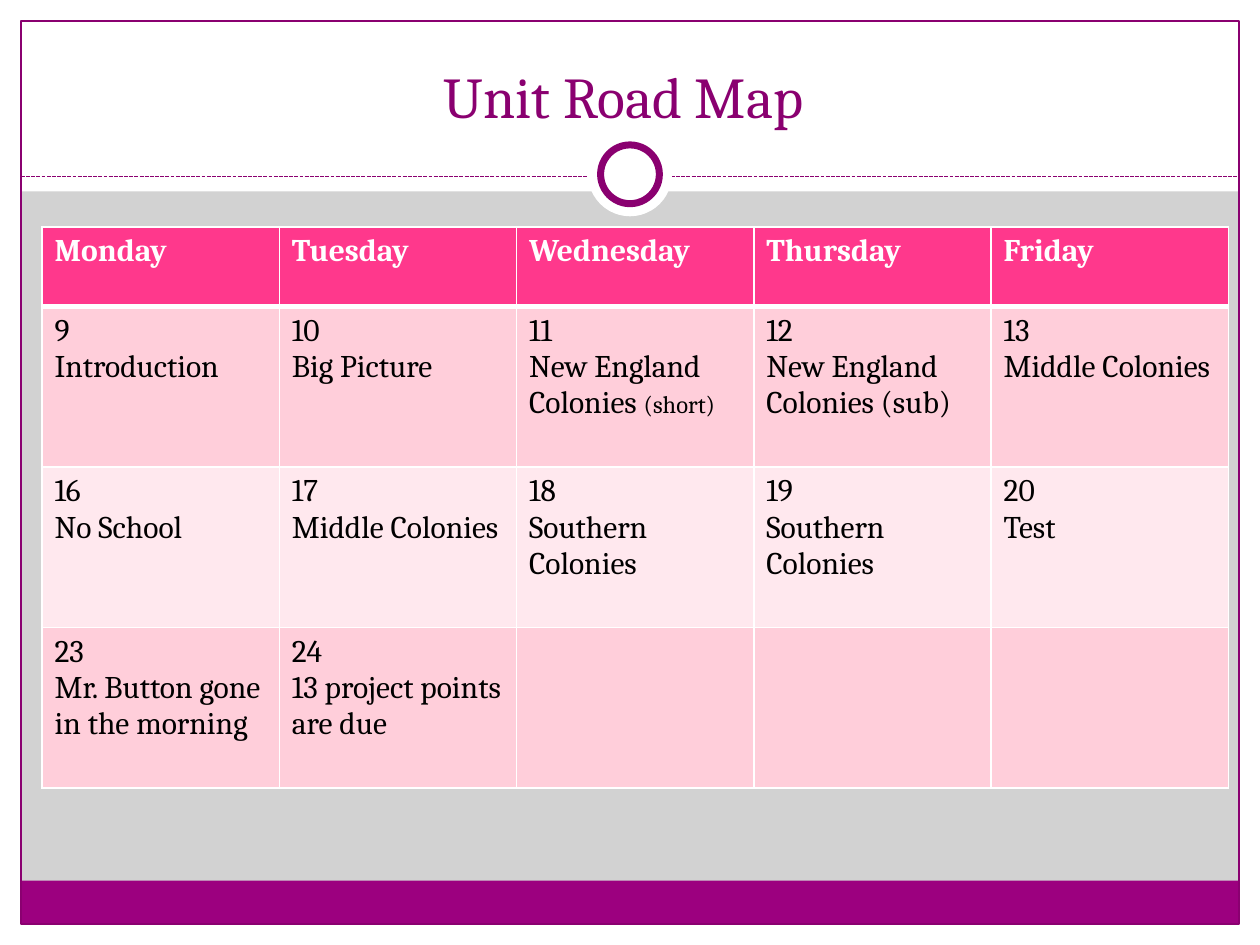
from lxml.etree import SubElement
from pptx import Presentation
from pptx.dml.color import RGBColor
from pptx.enum.dml import MSO_LINE
from pptx.enum.shapes import MSO_CONNECTOR, MSO_SHAPE
from pptx.enum.text import MSO_ANCHOR, MSO_AUTO_SIZE, PP_ALIGN
from pptx.oxml.ns import qn
from pptx.util import Inches, Pt

COLORS = {
    "back": "D2D2D2", "white": "FFFFFF", "black": "000000",
    "bar": "9C007F", "plum": "8A0070", "head": "FF388C",
    "odd": "FFCEDA", "even": "FFE8EE",
}
COLS, ROWS = 60, 45
DAYS = ["Monday", "Tuesday", "Wednesday", "Thursday", "Friday"]
WEEKS = [
    ["9\vIntroduction", "10\vBig Picture",
     ("11\vNew England Colonies ", "(short)"),
     "12\vNew England Colonies (sub)", "13\nMiddle Colonies"],
    ["16\vNo School", "17\vMiddle Colonies", "18\vSouthern Colonies",
     "19\vSouthern Colonies", "20\vTest"],
    ["23\vMr. Button gone in the morning",
     "24\v13 project points are due", "", "", ""],
]


def rgb(name):
    return RGBColor.from_string(COLORS[name])


def write(tf, text, size=18, color="black", bold=False, align=None, small=""):
    tf.text = text
    if small:
        tf.paragraphs[-1].add_run().text = small
    for p in tf.paragraphs:
        p.alignment = align
        for r in p.runs:
            r.font.name = "Cambria"
            r.font.size = Pt(size)
            r.font.bold = bold
            r.font.color.rgb = rgb(color)
    if small:
        tf.paragraphs[-1].runs[-1].font.size = Pt(14)


class Deck:
    def __init__(self):
        self.prs = Presentation()
        self.prs.slide_width, self.prs.slide_height = Inches(10), Inches(7.5)
        self.s = self.prs.slides.add_slide(self.prs.slide_layouts[5])
        fill = self.s.background.fill
        fill.solid()
        fill.fore_color.rgb = rgb("back")

    def x(self, cols):
        return round(self.prs.slide_width * cols / COLS)

    def y(self, rows):
        return round(self.prs.slide_height * rows / ROWS)

    def box(self, left, top, width, height):
        return self.x(left), self.y(top), self.x(width), self.y(height)

    def shape(self, *box, kind=MSO_SHAPE.RECTANGLE, fill=None, line=None, weight=0.75):
        sp = self.s.shapes.add_shape(kind, *self.box(*box))
        sp.shadow.inherit = False
        if fill:
            sp.fill.solid()
            sp.fill.fore_color.rgb = rgb(fill)
        else:
            sp.fill.background()
        if line:
            sp.line.color.rgb = rgb(line)
            sp.line.width = Pt(weight)
        else:
            sp.line.fill.background()

    def dashed_line(self, x1, x2, y):
        line = self.s.shapes.add_connector(
            MSO_CONNECTOR.STRAIGHT, self.x(x1), self.y(y), self.x(x2), self.y(y))
        line.line.color.rgb = rgb("plum")
        line.line.width = Pt(0.75)
        line.line.dash_style = MSO_LINE.SQUARE_DOT
        SubElement(line.element.spPr, qn("a:effectLst"))

    def title(self, text, *box):
        sp = self.s.shapes.title
        sp.left, sp.top, sp.width, sp.height = self.box(*box)
        sp.text_frame.auto_size = MSO_AUTO_SIZE.NONE
        sp.text_frame.vertical_anchor = MSO_ANCHOR.BOTTOM
        write(sp.text_frame, text, size=33, color="plum", align=PP_ALIGN.CENTER)
        self.s.shapes.element.append(sp.element)

    def borders(self, cell, **weights):
        tc_pr = cell._tc.get_or_add_tcPr()
        for side in "LRTB":
            ln = SubElement(tc_pr, qn(f"a:ln{side}"), w=str(Pt(weights.get(side, 1))))
            fill = SubElement(ln, qn("a:solidFill"))
            SubElement(fill, qn("a:srgbClr"), val=COLORS["white"])

    def calendar(self, left, top, width, head_height, week_height):
        rows = [DAYS] + WEEKS
        height = head_height + week_height * len(WEEKS)
        table = self.s.shapes.add_table(
            len(rows), len(DAYS), *self.box(left, top, width, height)).table
        for col in table.columns:
            col.width = self.x(width / len(DAYS))
        for i, texts in enumerate(rows):
            table.rows[i].height = self.y(week_height if i else head_height)
            for j, text in enumerate(texts):
                cell = table.cell(i, j)
                self.borders(cell, T=3 if i == 1 else 1, B=1 if i else 3)
                cell.fill.solid()
                cell.fill.fore_color.rgb = rgb(
                    "head" if i == 0 else "odd" if i % 2 else "even")
                main, small = text if isinstance(text, tuple) else (text, "")
                write(cell.text_frame, main, color="black" if i else "white",
                      bold=i == 0, small=small)


def main():
    deck = Deck()
    for box in [(0, 44, 60, 1), (0, 0, 60, 9.12), (0, 0, 1, 45), (59, 0, 1, 45)]:
        deck.shape(*box, fill="white")
    deck.shape(1, 41.94, 58, 2.06, fill="bar")
    deck.shape(1, 1, 58, 43, line="plum")
    deck.dashed_line(1, 59, 8.4)
    deck.shape(28, 6.3, 4, 4, kind=MSO_SHAPE.OVAL, fill="white")
    deck.shape(28.6, 6.9, 2.8, 2.8, kind=MSO_SHAPE.OVAL,
               fill="white", line="plum", weight=4)
    deck.title("Unit Road Map ", 2, 1.5, 56, 5)
    deck.calendar(2, 10.8, 56.5, head_height=3.8, week_height=7.64)
    deck.prs.save("out.pptx")


if __name__ == "__main__":
    main()
